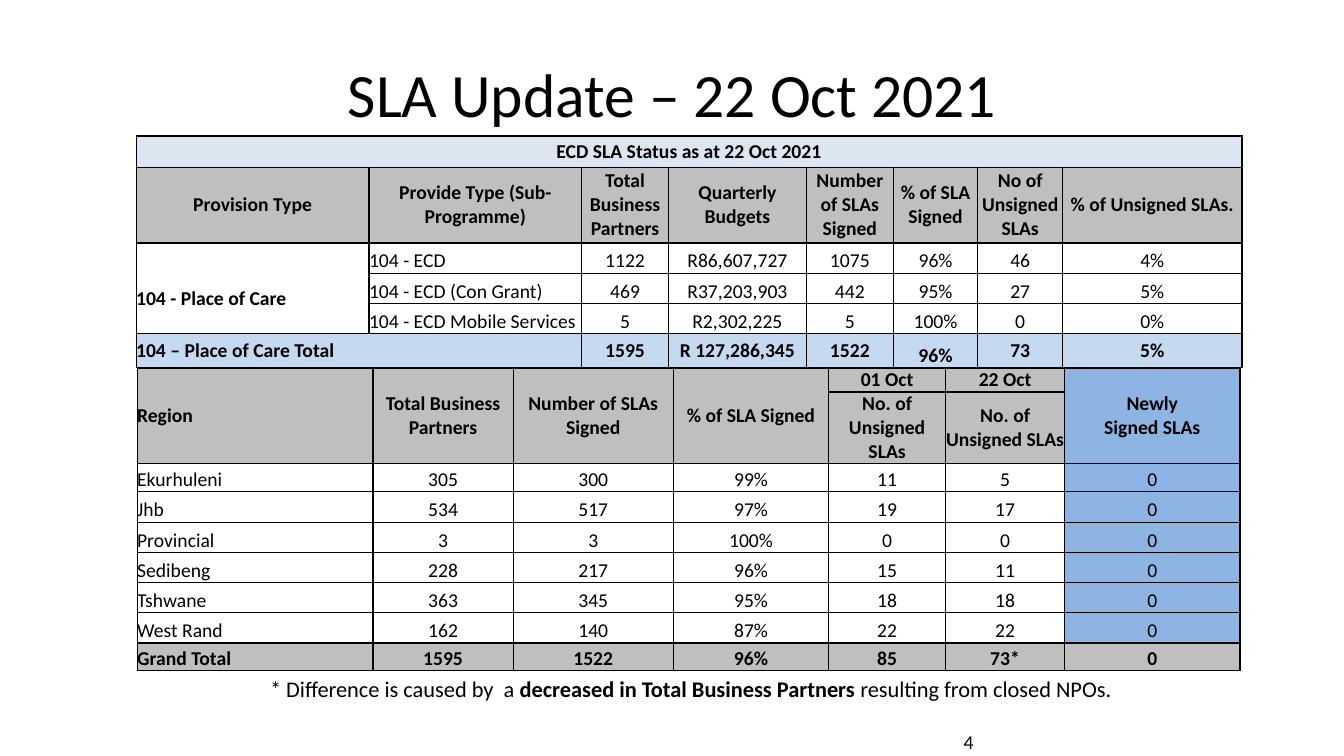
from lxml import etree
from pptx import Presentation
from pptx import util as u
from pptx.dml import color
from pptx.enum import text
from pptx.oxml import ns

COLORS = {"ink": "000000", "banner": "DCE6F1", "header": "BFBFBF",
          "total": "C5D9F1", "new": "8DB4E2"}
MIDDLE, BOTTOM = text.MSO_ANCHOR.MIDDLE, text.MSO_ANCHOR.BOTTOM
LEFT, CENTER = text.PP_ALIGN.LEFT, text.PP_ALIGN.CENTER
GRID_COLUMNS, GRID_ROWS = 133.3, 75

ROW_STYLES = {
    "banner": {"fill": "banner", "bold": True, "anchor": MIDDLE},
    "header": {"fill": "header", "bold": True, "anchor": MIDDLE},
    "body": {"fill": None, "bold": False, "anchor": BOTTOM},
    "total": {"fill": "total", "bold": True, "anchor": MIDDLE},
    "grand": {"fill": "header", "bold": True, "anchor": BOTTOM},
}

STATUS_COLUMNS = [23.1, 21.1, 8.6, 13.7, 8.6, 8.4, 8.4, 17.8]
STATUS_ROWS = [
    (3.1, "banner", ["ECD SLA Status as at 22 Oct 2021"] + [""] * 7),
    (7.5, "header", ["Provision Type", "Provide Type (Sub-Programme)",
                     "Total Business Partners", "Quarterly Budgets",
                     "Number of SLAs Signed", "% of SLA Signed",
                     "No of Unsigned SLAs", "% of Unsigned SLAs."]),
    (3, "body", ["104 - Place of Care", "104 - ECD", "1122", "R86,607,727",
                 "1075", "96%", "46", "4%"]),
    (3, "body", ["", "104 - ECD (Con Grant)", "469", "R37,203,903",
                 "442", "95%", "27", "5%"]),
    (3, "body", ["", "104 - ECD Mobile Services", "5", "R2,302,225",
                 "5", "100%", "0", "0%"]),
    (3.4, "total", ["104 – Place of Care Total", "", "1595", "R 127,286,345",
                    "1522", "96%", "73", "5%"]),
]
STATUS_MERGES = [(0, 0, 0, 7), (2, 0, 4, 0), (5, 0, 5, 1)]
STATUS_CHANGES = {(row, column): {"align": LEFT}
                  for row in (2, 3, 4, 5) for column in (0, 1)}
STATUS_CHANGES[2, 0] = {"align": LEFT, "bold": True, "bottom": 2.3}
STATUS_CHANGES[5, 5] = {"anchor": BOTTOM}

REGION_COLUMNS = [23.4, 13.9, 15.9, 15.4, 11.6, 11.8, 17.4]
REGION_ROWS = [
    (2.4, "header", ["Region", "Total Business Partners", "Number of SLAs Signed",
                     "% of SLA Signed", "01 Oct", "22 Oct", "Newly\nSigned SLAs"]),
    (7.1, "header", [""] * 4 + ["No. of Unsigned SLAs"] * 2 + [""]),
    (2.8, "body", ["Ekurhuleni", "305", "300", "99%", "11", "5", "0"]),
    (3, "body", ["Jhb", "534", "517", "97%", "19", "17", "0"]),
    (3, "body", ["Provincial", "3", "3", "100%", "0", "0", "0"]),
    (3, "body", ["Sedibeng", "228", "217", "96%", "15", "11", "0"]),
    (3, "body", ["Tshwane", "363", "345", "95%", "18", "18", "0"]),
    (3, "body", ["West Rand", "162", "140", "87%", "22", "22", "0"]),
    (2.7, "grand", ["Grand Total", "1595", "1522", "96%", "85", "73*", "0"]),
]
REGION_MERGES = [(0, column, 1, column) for column in (0, 1, 2, 3, 6)]
REGION_CHANGES = {(row, 0): {"align": LEFT} for row in range(len(REGION_ROWS))}
REGION_CHANGES.update({(row, 6): {"fill": "new"} for row in range(len(REGION_ROWS) - 1)})


class SlideBuilder:
    """Holds the style and the current slide, measured on a grid."""

    def __init__(self, presentation):
        self.font = "Calibri"
        self.column = presentation.slide_width / GRID_COLUMNS
        self.row = presentation.slide_height / GRID_ROWS
        self.slide = presentation.slides.add_slide(presentation.slide_layouts[6])

    def box(self, left, top, width, height):
        return [round(left * self.column), round(top * self.row),
                round(width * self.column), round(height * self.row)]

    def add_runs(self, paragraph, runs, size, align):
        paragraph.alignment = align
        for words, bold in runs:
            run = paragraph.add_run()
            run.text = words
            for name, value in {"name": self.font, "size": u.Pt(size), "bold": bold}.items():
                setattr(run.font, name, value)
            run.font.color.rgb = color.RGBColor.from_string(COLORS["ink"])

    def textbox(self, box, runs, size, align=LEFT, anchor=MIDDLE, wrap=True):
        frame = self.slide.shapes.add_textbox(*self.box(*box)).text_frame
        for name, value in {"word_wrap": wrap, "vertical_anchor": anchor}.items():
            setattr(frame, name, value)
        self.add_runs(frame.paragraphs[0], runs, size, align)

    def borders(self, cell):
        properties = cell._tc.get_or_add_tcPr()
        for index, side in enumerate(("lnL", "lnR", "lnT", "lnB")):
            line = etree.Element(ns.qn("a:" + side), w=str(u.Pt(1)))
            fill = etree.SubElement(line, ns.qn("a:solidFill"))
            etree.SubElement(fill, ns.qn("a:srgbClr"), val=COLORS["ink"])
            properties.insert(index, line)

    def cell(self, cell, value, style):
        settings = {"margin_left": 0, "margin_right": 0, "margin_top": 0,
                    "margin_bottom": round(style.get("bottom", 0) * self.row),
                    "vertical_anchor": style["anchor"]}
        for name, setting in settings.items():
            setattr(cell, name, setting)
        if style["fill"]:
            cell.fill.solid()
            cell.fill.fore_color.rgb = color.RGBColor.from_string(COLORS[style["fill"]])
        else:
            cell.fill.background()
        self.borders(cell)
        frame = cell.text_frame
        for index, words in enumerate(value.split("\n") if value else []):
            paragraph = frame.add_paragraph() if index else frame.paragraphs[0]
            self.add_runs(paragraph, [(words, style["bold"])], 14, style.get("align", CENTER))

    def table(self, left, top, columns, rows, merges, changes):
        height = sum(row[0] for row in rows)
        box = self.box(left, top, sum(columns), height)
        table = self.slide.shapes.add_table(len(rows), len(columns), *box).table
        for name in ("first_row", "horz_banding"):
            setattr(table, name, False)
        for column, width in zip(table.columns, columns):
            column.width = round(width * self.column)
        for row_index, (row_height, kind, values) in enumerate(rows):
            table.rows[row_index].height = round(row_height * self.row)
            for column_index, value in enumerate(values):
                style = {**ROW_STYLES[kind], **changes.get((row_index, column_index), {})}
                self.cell(table.cell(row_index, column_index), value, style)
        for first_row, first_column, last_row, last_column in merges:
            table.cell(first_row, first_column).merge(table.cell(last_row, last_column))


def main():
    presentation = Presentation()
    presentation.slide_width, presentation.slide_height = u.Inches(13.33), u.Inches(7.5)
    builder = SlideBuilder(presentation)
    builder.textbox((6.7, 3, 120, 12.5), [("SLA Update – 22 Oct 2021", False)], 44, CENTER)
    builder.textbox((94.6, 71.6, 5, 4), [("4", False)], 14)
    builder.table(13.5, 13.5, STATUS_COLUMNS, STATUS_ROWS, STATUS_MERGES, STATUS_CHANGES)
    builder.table(13.6, 36.5, REGION_COLUMNS, REGION_ROWS, REGION_MERGES, REGION_CHANGES)
    footnote = [("* Difference is caused by  a ", False),
                ("decreased in Total Business Partners ", True),
                ("resulting from closed NPOs.", False)]
    builder.textbox((25.8, 66.5, 86.5, 3.7), footnote, 16, anchor=text.MSO_ANCHOR.TOP, wrap=False)
    presentation.save("out.pptx")


if __name__ == "__main__":
    main()
